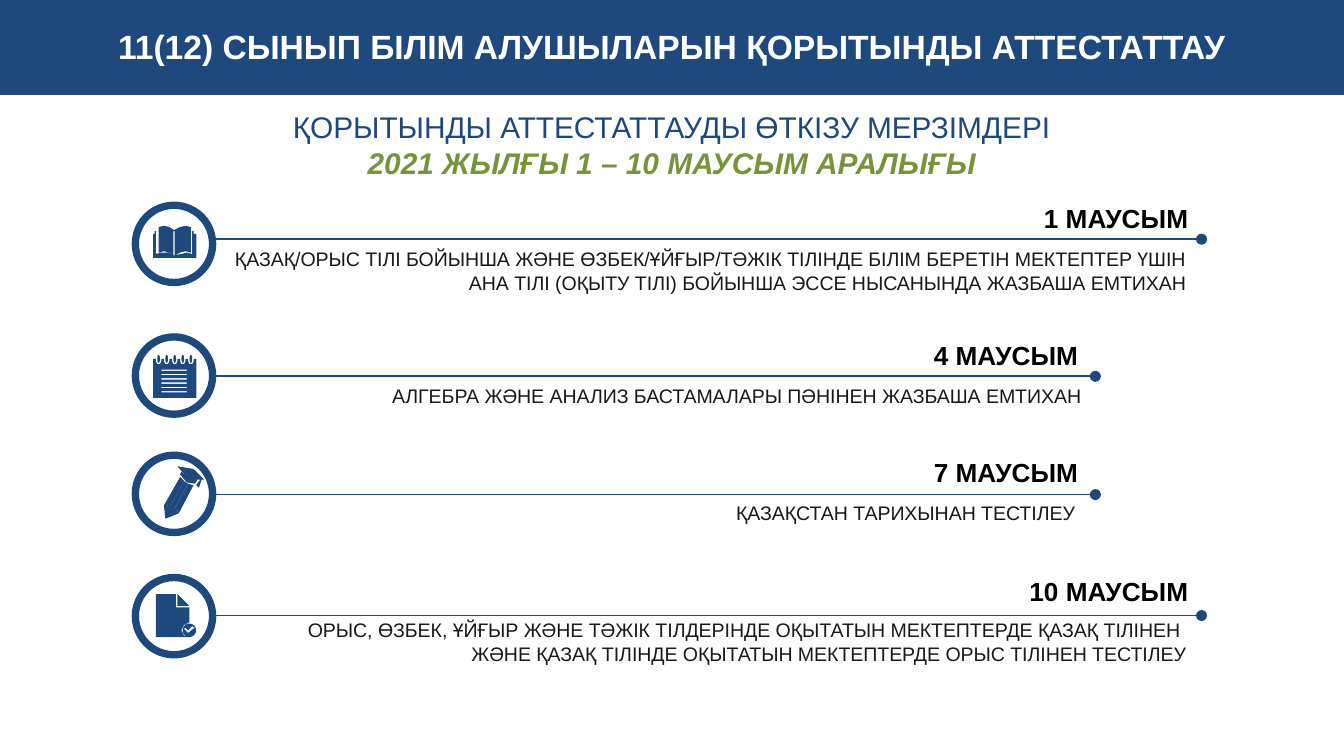
"""Build a slide with the dates of the final school examinations."""
from dataclasses import dataclass
from math import cos, pi, sin

from pptx import Presentation
from pptx.dml.color import RGBColor
from pptx.enum.shapes import MSO_CONNECTOR, MSO_SHAPE
from pptx.enum.text import MSO_ANCHOR, MSO_AUTO_SIZE, PP_ALIGN
from pptx.oxml.ns import qn
from pptx.util import Inches, Pt
from lxml.etree import SubElement

NAVY = RGBColor(0x1F, 0x49, 0x7D)
GREEN = RGBColor(0x77, 0x93, 0x3C)
CHARCOAL = RGBColor(0x19, 0x19, 0x19)
BLACK = RGBColor(0, 0, 0)
WHITE = RGBColor(0xFF, 0xFF, 0xFF)
RING_LEFT, RING_SIZE = 0.98, 0.63


@dataclass
class Exam:
    """Content and positions of one examination row; boxes are left, top, width, height."""
    date: str
    details: list
    ring_top: float
    line_y: float
    line_end: float
    date_box: tuple
    details_box: tuple
    icon: list


def rectangle(left, top, right, bottom):
    """Return the corners of a rectangle."""
    return [(left, top), (right, top), (right, bottom), (left, bottom)]


def ellipse(center_x, center_y, radius_x, radius_y, steps=24):
    """Return points around an ellipse."""
    angles = [2 * pi * step / steps for step in range(steps)]
    return [(center_x + radius_x * cos(a), center_y + radius_y * sin(a)) for a in angles]


def book_icon():
    """Return the outlines of an open book."""
    cover = [(1.14, 1.74), (1.15, 1.74), (1.15, 1.72), (1.18, 1.72), (1.18, 1.69), (1.22, 1.68),
             (1.26, 1.69), (1.29, 1.71), (1.3, 1.71), (1.34, 1.69), (1.38, 1.68), (1.42, 1.69),
             (1.42, 1.72), (1.44, 1.72), (1.44, 1.74), (1.46, 1.74), (1.46, 1.92), (1.14, 1.92)]
    left_edge = [(1.16, 1.72), (1.18, 1.72), (1.18, 1.88), (1.22, 1.87), (1.26, 1.88),
                 (1.29, 1.9), (1.25, 1.88), (1.2, 1.88), (1.16, 1.89)]
    right_edge = [(1.43, 1.72), (1.42, 1.72), (1.42, 1.88), (1.38, 1.87), (1.34, 1.88),
                  (1.3, 1.9), (1.35, 1.89), (1.39, 1.88), (1.43, 1.89)]
    spine = rectangle(1.29, 1.72, 1.3, 1.9)
    return [[cover, left_edge, right_edge, spine]]


def notepad_icon():
    """Return the outlines of a ring-bound notepad."""
    ring_centers = [1.18 + 0.06 * index for index in range(5)]
    page = [(1.14, 2.67)]
    for center in ring_centers:
        page += [(center - 0.02, 2.67), (center - 0.02, 2.69), (center - 0.01, 2.71),
                 (center + 0.01, 2.71), (center + 0.02, 2.69), (center + 0.02, 2.67)]
    page += [(1.46, 2.67), (1.46, 2.96), (1.14, 2.96)]
    rings = [ellipse(center, 2.67, 0.01, 0.03) for center in ring_centers]
    row_tops = [2.75 + 0.16 * index / 5 for index in range(6)]
    rows = [rectangle(1.2, top, 1.39, top + 0.01) for top in row_tops]
    return [[page, *rings, *rows]]


def pencil_icon():
    """Return the outlines of a pencil wearing a graduation cap."""
    tip = [(1.23, 3.75), (1.33, 3.81), (1.33, 3.82), (1.23, 3.86), (1.22, 3.76)]
    bands = [
        [(1.34, 3.55), (1.37, 3.58), (1.26, 3.78), (1.25, 3.76), (1.22, 3.76)],
        [(1.37, 3.58), (1.4, 3.6), (1.29, 3.8), (1.28, 3.78), (1.26, 3.78)],
        [(1.4, 3.6), (1.44, 3.61), (1.33, 3.82), (1.32, 3.8), (1.29, 3.8)],
    ]
    cap_base = [(1.35, 3.51), (1.4, 3.56), (1.47, 3.57), (1.45, 3.6), (1.39, 3.59), (1.34, 3.53)]
    cap_top = [(1.44, 3.49), (1.52, 3.57), (1.5, 3.57), (1.48, 3.63), (1.46, 3.61),
               (1.49, 3.57), (1.4, 3.56), (1.32, 3.47)]
    return [[tip], *[[band] for band in bands], [cap_base, cap_top]]


def document_icon():
    """Return the outlines of a page with a check badge."""
    page = [(1.16, 4.42), (1.31, 4.42), (1.31, 4.52), (1.41, 4.52), (1.41, 4.63),
            (1.37, 4.65), (1.35, 4.69), (1.37, 4.73), (1.41, 4.74), (1.16, 4.74)]
    fold = [(1.32, 4.42), (1.41, 4.51), (1.32, 4.51)]
    badge = ellipse(1.41, 4.69, 0.05, 0.05)
    check = [(1.43, 4.66), (1.4, 4.69), (1.38, 4.67), (1.37, 4.68), (1.4, 4.71), (1.45, 4.67)]
    return [[page, fold, badge, check]]


def paint(shape, color):
    """Give a shape a flat fill without outline or shadow."""
    shape.shadow.inherit = False
    shape.fill.solid()
    shape.fill.fore_color.rgb = color
    shape.line.fill.background()


def write(paragraph, text, *, size, color, bold=False, italic=False, align=PP_ALIGN.RIGHT):
    """Put formatted text into a paragraph."""
    paragraph.alignment = align
    run = paragraph.add_run()
    run.text = text
    font = run.font
    font.name, font.size, font.bold, font.italic = "Arial", Pt(size), bold, italic
    font.color.rgb = color


def set_margins(frame):
    """Set the narrow margins used in the heading area."""
    frame.margin_left = frame.margin_right = Inches(0.07)
    frame.margin_top = frame.margin_bottom = Inches(0.04)


def add_text(shapes, box, lines):
    """Add a wrapping text box from pairs of text and format."""
    frame = shapes.add_textbox(*map(Inches, box)).text_frame
    frame.word_wrap = True
    frame.auto_size = MSO_AUTO_SIZE.SHAPE_TO_FIT_TEXT
    for index, (text, style) in enumerate(lines):
        paragraph = frame.add_paragraph() if index else frame.paragraphs[0]
        write(paragraph, text, **style)
    return frame


def add_banner(shapes, text):
    """Add the title band across the slide."""
    banner = shapes.add_shape(MSO_SHAPE.RECTANGLE, 0, 0, Inches(10), Inches(0.69))
    paint(banner, NAVY)
    banner.line.color.rgb = NAVY
    banner.line.width = Pt(2)
    frame = banner.text_frame
    frame.word_wrap = True
    frame.vertical_anchor = MSO_ANCHOR.MIDDLE
    set_margins(frame)
    write(frame.paragraphs[0], text, size=18, color=WHITE, bold=True, align=PP_ALIGN.CENTER)


def add_ring(shapes, top):
    """Add the ring around an icon."""
    ring = shapes.add_shape(MSO_SHAPE.DONUT, Inches(RING_LEFT), Inches(top),
                            Inches(RING_SIZE), Inches(RING_SIZE))
    ring.adjustments[0] = 0.087
    paint(ring, NAVY)


def add_dotted_line(shapes, y, end):
    """Add a horizontal line that ends in a dot."""
    connector = shapes.add_connector(MSO_CONNECTOR.STRAIGHT, Inches(RING_LEFT + RING_SIZE),
                                     Inches(y), Inches(end), Inches(y))
    connector.line.color.rgb = NAVY
    connector.line.width = Pt(1)
    properties = connector._element.spPr
    SubElement(properties.get_or_add_ln(), qn("a:tailEnd"), type="oval")
    SubElement(properties, qn("a:effectLst"))


def add_outline(shapes, contours):
    """Add one filled freeform; inner contours become holes."""
    scaled = [[(Inches(x), Inches(y)) for x, y in contour] for contour in contours]
    builder = shapes.build_freeform(*scaled[0][0])
    builder.add_line_segments(scaled[0][1:], close=True)
    for contour in scaled[1:]:
        builder.move_to(*contour[0])
        builder.add_line_segments(contour[1:], close=True)
    paint(builder.convert_to_shape(), NAVY)


def add_exam(slide, exam):
    """Add one grouped row with icon, line, date and details."""
    shapes = slide.shapes.add_group_shape().shapes
    add_ring(shapes, exam.ring_top)
    add_dotted_line(shapes, exam.line_y, exam.line_end)
    add_text(shapes, exam.details_box,
             [(text, dict(size=10.5, color=CHARCOAL)) for text in exam.details])
    add_text(shapes, exam.date_box, [(exam.date, dict(size=14, color=BLACK, bold=True))])
    for contours in exam.icon:
        add_outline(shapes, contours)


def main():
    """Build and save the slide."""
    presentation = Presentation()
    presentation.slide_width = Inches(10)
    presentation.slide_height = presentation.slide_width * 9 // 16
    slide = presentation.slides.add_slide(presentation.slide_layouts[6])
    add_banner(slide.shapes, "11(12) СЫНЫП БІЛІМ АЛУШЫЛАРЫН ҚОРЫТЫНДЫ АТТЕСТАТТАУ")
    centered = dict(size=16, align=PP_ALIGN.CENTER)
    set_margins(add_text(slide.shapes, (0, 0.77, 10, 0.61), [
        ("ҚОРЫТЫНДЫ АТТЕСТАТТАУДЫ ӨТКІЗУ МЕРЗІМДЕРІ", dict(centered, color=NAVY)),
        ("2021 ЖЫЛҒЫ 1 – 10 МАУСЫМ АРАЛЫҒЫ", dict(centered, color=GREEN, bold=True, italic=True)),
    ]))
    exams = [
        Exam("4 МАУСЫМ", ["АЛГЕБРА ЖӘНЕ АНАЛИЗ БАСТАМАЛАРЫ ПӘНІНЕН ЖАЗБАША ЕМТИХАН"],
             2.48, 2.8, 8.15, (4.84, 2.48, 3.28, 0.34), (2.64, 2.81, 5.51, 0.28), notepad_icon()),
        Exam("10 МАУСЫМ", ["ОРЫС, ӨЗБЕК, ҰЙҒЫР ЖӘНЕ ТӘЖІК ТІЛДЕРІНДЕ ОҚЫТАТЫН МЕКТЕПТЕРДЕ ҚАЗАҚ ТІЛІНЕН ",
                           "ЖӘНЕ ҚАЗАҚ ТІЛІНДЕ ОҚЫТАТЫН МЕКТЕПТЕРДЕ ОРЫС ТІЛІНЕН ТЕСТІЛЕУ"],
             4.27, 4.58, 8.94, (5.13, 4.23, 3.81, 0.34), (1.68, 4.55, 7.25, 0.45), document_icon()),
        Exam("7 МАУСЫМ", ["ҚАЗАҚСТАН ТАРИХЫНАН ТЕСТІЛЕУ"],
             3.36, 3.68, 8.15, (4.17, 3.35, 3.95, 0.34), (4.17, 3.68, 3.93, 0.28), pencil_icon()),
        Exam("1 МАУСЫМ", ["ҚАЗАҚ/ОРЫС ТІЛІ БОЙЫНША ЖӘНЕ ӨЗБЕК/ҰЙҒЫР/ТӘЖІК ТІЛІНДЕ БІЛІМ БЕРЕТІН "
                          "МЕКТЕПТЕР ҮШІН АНА ТІЛІ (ОҚЫТУ ТІЛІ) БОЙЫНША ЭССЕ НЫСАНЫНДА ЖАЗБАША ЕМТИХАН"],
             1.5, 1.78, 8.94, (3.71, 1.46, 5.23, 0.34), (1.61, 1.79, 7.32, 0.45), book_icon()),
    ]
    for exam in exams:
        add_exam(slide, exam)
    presentation.save("out.pptx")


if __name__ == "__main__":
    main()
